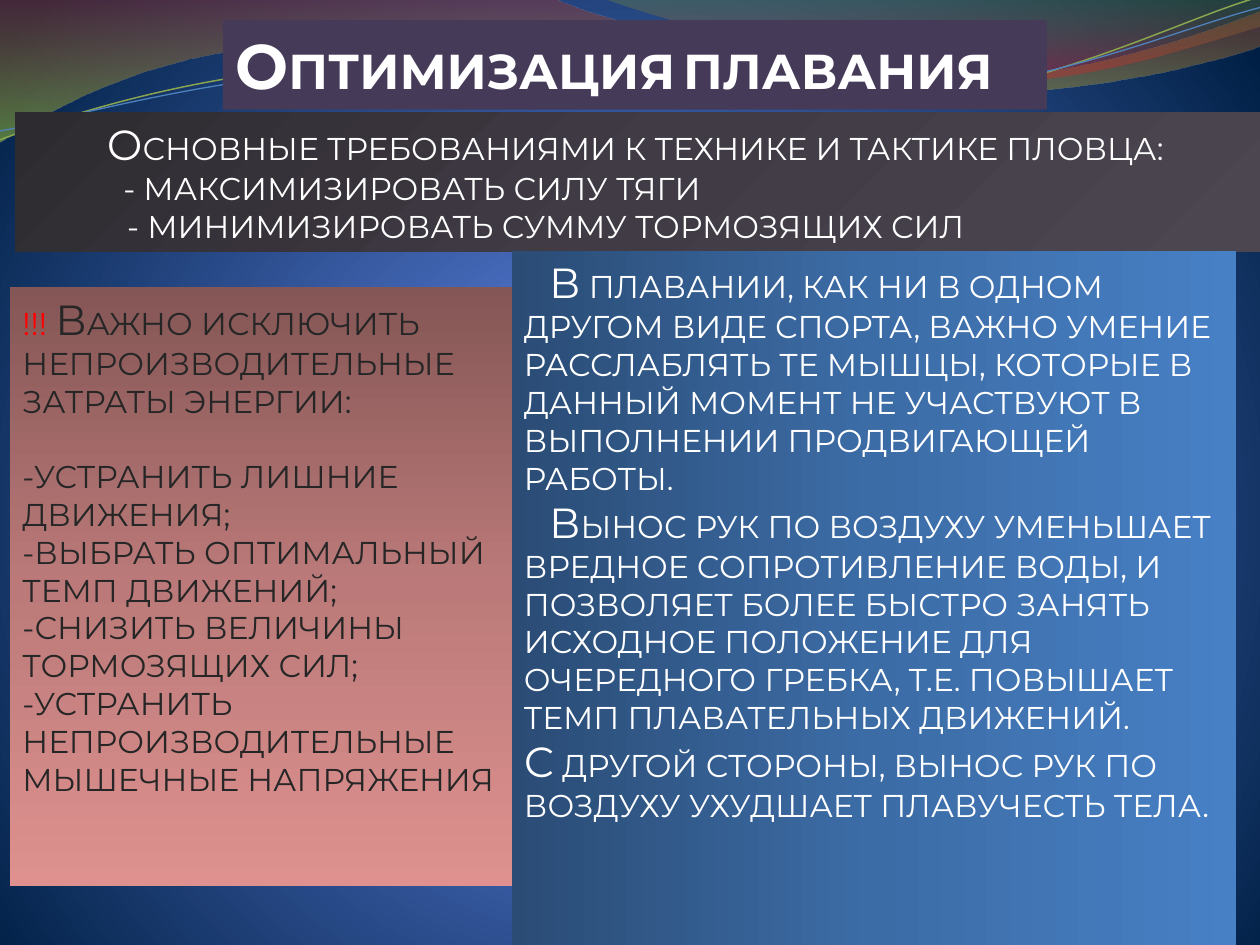
"""Builds a slide on the optimisation of swimming."""
import math
from lxml import etree
from pptx import Presentation, util as u
from pptx.dml.color import RGBColor
from pptx.enum import shapes, text
from pptx.oxml.ns import qn

HUE = {
    "white": "FFFFFF", "ink": "262626", "red": "FF0000", "plum": "463A59",
    "green": "89A54F", "blue": "4F81BD",
}
FONT = "Montserrat"
WIDE, HIGH = u.Inches(10), u.Inches(7.5)
UNIT = WIDE / 10
TILT = 357.3

BACK = [(0, "4D75D6", 100), (25, "4E72C7", 100), (100, "001F44", 100)]
FOCUS = {"l": 10, "t": 110, "r": 10, "b": 100}

WAVES = [
    ((0, 0), [
        [(4.4, -0.01)],
        [(4.76, 0.17), (6.64, 0.63), (7.58, 0.63)],
        [(8.53, 0.63), (9.58, 0.26), (10, 0.09)],
        [(10.01, 0.36)],
        [(9.83, 0.44), (8.7, 0.76), (7.46, 0.75)],
        [(6.22, 0.75), (3.82, 0.28), (2.57, 0.34)],
        [(1.29, 0.36), (0.46, 0.83), (-0.01, 1.13)],
        [(0, 0)],
    ], [(0, "973330", 45), (100, "95C238", 55)]),
    ((4.79, -0.01), [
        [(5.09, 0.11), (6.82, 0.62), (7.69, 0.65)],
        [(8.56, 0.69), (9.61, 0.32), (10, 0.21)],
        [(10, 0)],
        [(4.79, -0.01)],
    ], [(0, "769537", 30), (80, "BE3330", 45)]),
]
LINES = [
    ((0, 1.11), [
        [(0.48, 0.93), (1.58, 0.57), (2.77, 0.52)],
        [(3.95, 0.47), (5.93, 0.89), (7.13, 0.8)],
        [(8.33, 0.71), (9.38, 0.15), (9.98, -0.02)],
    ], (4.99, 0.57), "green", 0.85),
    ((0, 1.04), [
        [(0.47, 0.96), (1.64, 0.61), (2.83, 0.56)],
        [(4.03, 0.51), (5.97, 0.84), (7.17, 0.75)],
        [(8.36, 0.67), (9.41, 0.21), (10, 0.06)],
    ], (5, 0.59), "blue", 0.75),
]

BOXES = [
    {"at": (0.12, 0.89, 9.88, 1.11), "ang": 45, "hue": "white",
     "fill": [(0, "2D2A30", 100), (50, "403B44", 100), (100, "4C4651", 100)],
     "paras": [
         (0.63, 0, [("О", 24), ("СНОВНЫЕ ТРЕБОВАНИЯМИ К ТЕХНИКЕ И ТАКТИКЕ ПЛОВЦА:", 18)]),
         (0.76, 0, [("- МАКСИМИЗИРОВАТЬ СИЛУ ТЯГИ", 18)]),
         (0.79, 0, [("- МИНИМИЗИРОВАТЬ СУММУ ТОРМОЗЯЩИХ СИЛ", 18)])]},
    {"at": (1.77, 0.16, 6.54, 0.71), "fill": "plum", "hue": "white", "bold": True,
     "paras": [(0, 0, [("О", 36), ("ПТИМИЗАЦИЯ", 28), (" ", 16), ("ПЛАВАНИЯ", 28)])]},
    {"at": (0.08, 2.28, 4.06, 4.75), "ang": 90, "hue": "ink",
     "fill": [(0, "845655", 100), (50, "BB7A79", 100), (100, "DE918F", 100)],
     "paras": [
         (0, 0, [("!!! ", 18, "red"), ("В", 24),
                 ("АЖНО ИСКЛЮЧИТЬ НЕПРОИЗВОДИТЕЛЬНЫЕ ЗАТРАТЫ ЭНЕРГИИ:", 18)]),
         (0, 21.6, [("-УСТРАНИТЬ ЛИШНИЕ ДВИЖЕНИЯ;\n"
                     "-ВЫБРАТЬ ОПТИМАЛЬНЫЙ ТЕМП ДВИЖЕНИЙ;\n"
                     "-СНИЗИТЬ ВЕЛИЧИНЫ ТОРМОЗЯЩИХ СИЛ;\n"
                     "-УСТРАНИТЬ НЕПРОИЗВОДИТЕЛЬНЫЕ МЫШЕЧНЫЕ НАПРЯЖЕНИЯ", 18)])]},
    {"at": (4.06, 1.99, 5.75, 5.55), "ang": 0, "hue": "white",
     "fill": [(0, "2A4C75", 100), (50, "3C6CA6", 100), (100, "4780C5", 100)],
     "paras": [
         (0.2, 0, [("В", 24), (" ПЛАВАНИИ, КАК НИ В ОДНОМ ДРУГОМ ВИДЕ СПОРТА, ВАЖНО УМЕНИЕ "
                               "РАССЛАБЛЯТЬ ТЕ МЫШЦЫ, КОТОРЫЕ В ДАННЫЙ МОМЕНТ НЕ УЧАСТВУЮТ "
                               "В ВЫПОЛНЕНИИ ПРОДВИГАЮЩЕЙ РАБОТЫ.", 18)]),
         (0.2, 0, [("В", 24), ("ЫНОС РУК ПО ВОЗДУХУ УМЕНЬШАЕТ ВРЕДНОЕ СОПРОТИВЛЕНИЕ ВОДЫ, "
                               "И ПОЗВОЛЯЕТ БОЛЕЕ БЫСТРО ЗАНЯТЬ ИСХОДНОЕ ПОЛОЖЕНИЕ ДЛЯ "
                               "ОЧЕРЕДНОГО ГРЕБКА, Т.Е. ПОВЫШАЕТ ТЕМП ПЛАВАТЕЛЬНЫХ "
                               "ДВИЖЕНИЙ.", 18)]),
         (0, 0, [("С", 24), (" ДРУГОЙ СТОРОНЫ, ВЫНОС РУК ПО ВОЗДУХУ УХУДШАЕТ "
                             "ПЛАВУЧЕСТЬ ТЕЛА.", 18)])]},
]


def emu(size):
    return round(size * UNIT)


def color(name):
    return RGBColor.from_string(HUE[name])


def blend(owner, root, stops, ang=None):
    owner.fill.gradient()
    grad = root.xpath(".//a:gradFill")[0]
    for kid in list(grad):
        grad.remove(kid)
    group = etree.SubElement(grad, qn("a:gsLst"))
    for pos, code, alpha in stops:
        stop = etree.SubElement(group, qn("a:gs"), pos=str(pos * 1000))
        tint = etree.SubElement(stop, qn("a:srgbClr"), val=code)
        if alpha < 100:
            etree.SubElement(tint, qn("a:alpha"), val=str(alpha * 1000))
    if ang is None:
        ring = etree.SubElement(grad, qn("a:path"), path="circle")
        etree.SubElement(ring, qn("a:fillToRect"),
                         {side: str(part * 1000) for side, part in FOCUS.items()})
    else:
        etree.SubElement(grad, qn("a:lin"), ang=str(ang * 60000), scaled="0")


def turn(dot, mid):
    rad = math.radians(-TILT)
    x, y = dot[0] - mid[0], dot[1] - mid[1]
    return (mid[0] + x * math.cos(rad) - y * math.sin(rad),
            mid[1] + x * math.sin(rad) + y * math.cos(rad))


def draw(slide, start, parts, close):
    first, *ends = [(emu(x), emu(y)) for x, y in [start, *(part[-1] for part in parts)]]
    pen = slide.shapes.build_freeform(*first)
    pen.add_line_segments(ends, close=close)
    shape = pen.convert_to_shape()
    shape.shadow.inherit = False
    for node, part in zip(shape._element.xpath(".//a:lnTo"), parts):
        if len(part) == 3:
            node.tag = qn("a:cubicBezTo")
            node.remove(node[0])
            for x, y in part:
                etree.SubElement(node, qn("a:pt"), x=str(emu(x) - shape.left),
                                 y=str(emu(y) - shape.top))
    return shape


def write(frame, box):
    frame.word_wrap = True
    frame.vertical_anchor = text.MSO_ANCHOR.TOP
    for i, (dent, gap, runs) in enumerate(box["paras"]):
        para = frame.add_paragraph() if i else frame.paragraphs[0]
        para.alignment = text.PP_ALIGN.LEFT
        para.space_before = u.Pt(gap)
        para._p.get_or_add_pPr().set("indent", str(emu(dent)))
        for words, size, *hue in runs:
            for row, line in enumerate(words.split("\n")):
                if row:
                    para.add_line_break()
                run = para.add_run()
                run.text = line
                font = run.font
                font.name, font.size, font.bold = FONT, u.Pt(size), box.get("bold", False)
                font.color.rgb = color(hue[0] if hue else box["hue"])


def main():
    deck = Presentation()
    deck.slide_width, deck.slide_height = WIDE, HIGH
    slide = deck.slides.add_slide(deck.slide_layouts[6])
    blend(slide.background, slide._element, BACK)
    for start, parts, stops in WAVES:
        wave = draw(slide, start, parts, True)
        blend(wave, wave._element, stops, 90)
        wave.line.fill.background()
    for start, parts, mid, hue, width in LINES:
        flat = [[turn(dot, mid) for dot in part] for part in parts]
        line = draw(slide, turn(start, mid), flat, False)
        line.rotation = TILT
        line.fill.background()
        line.line.color.rgb = color(hue)
        line.line.width = u.Pt(width)
    for box in BOXES:
        shape = slide.shapes.add_shape(shapes.MSO_SHAPE.RECTANGLE, *map(emu, box["at"]))
        shape.shadow.inherit = False
        shape.line.fill.background()
        if "ang" in box:
            blend(shape, shape._element, box["fill"], box["ang"])
        else:
            shape.fill.solid()
            shape.fill.fore_color.rgb = color(box["fill"])
        write(shape.text_frame, box)
    deck.save("out.pptx")


if __name__ == "__main__":
    main()
